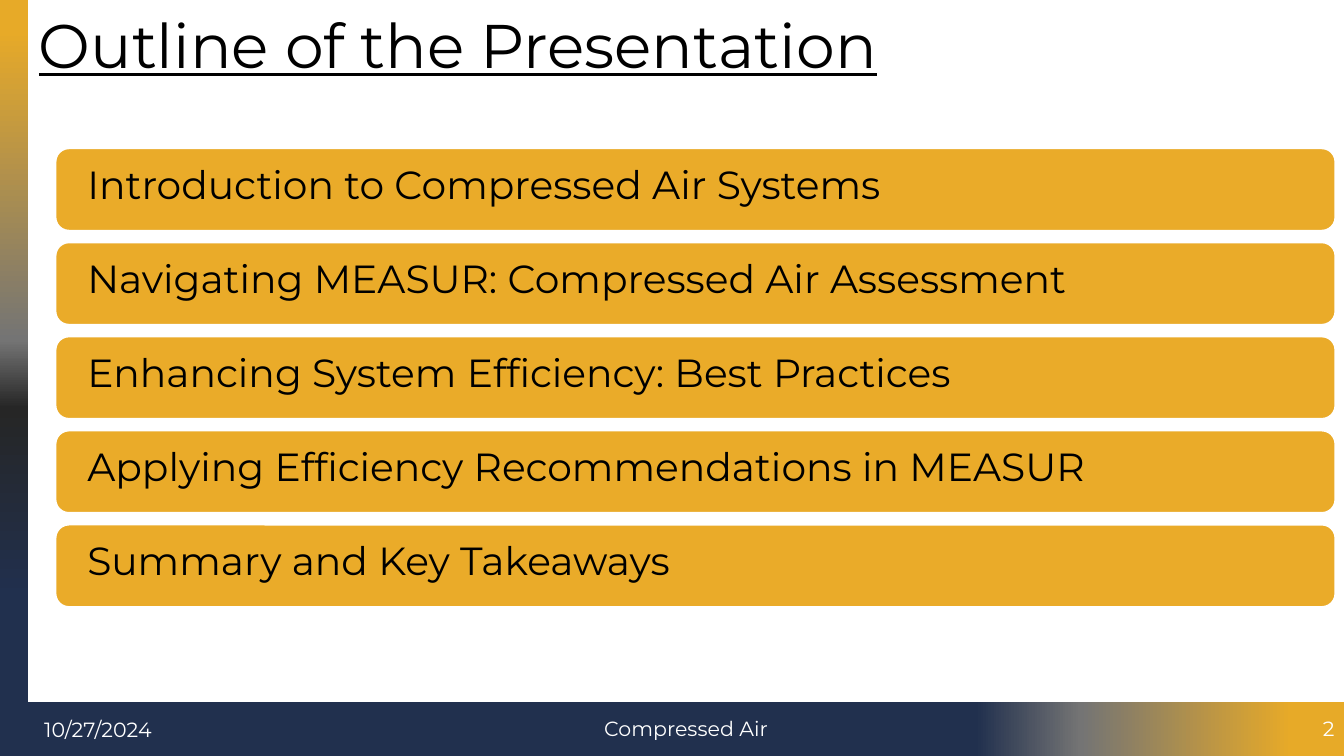
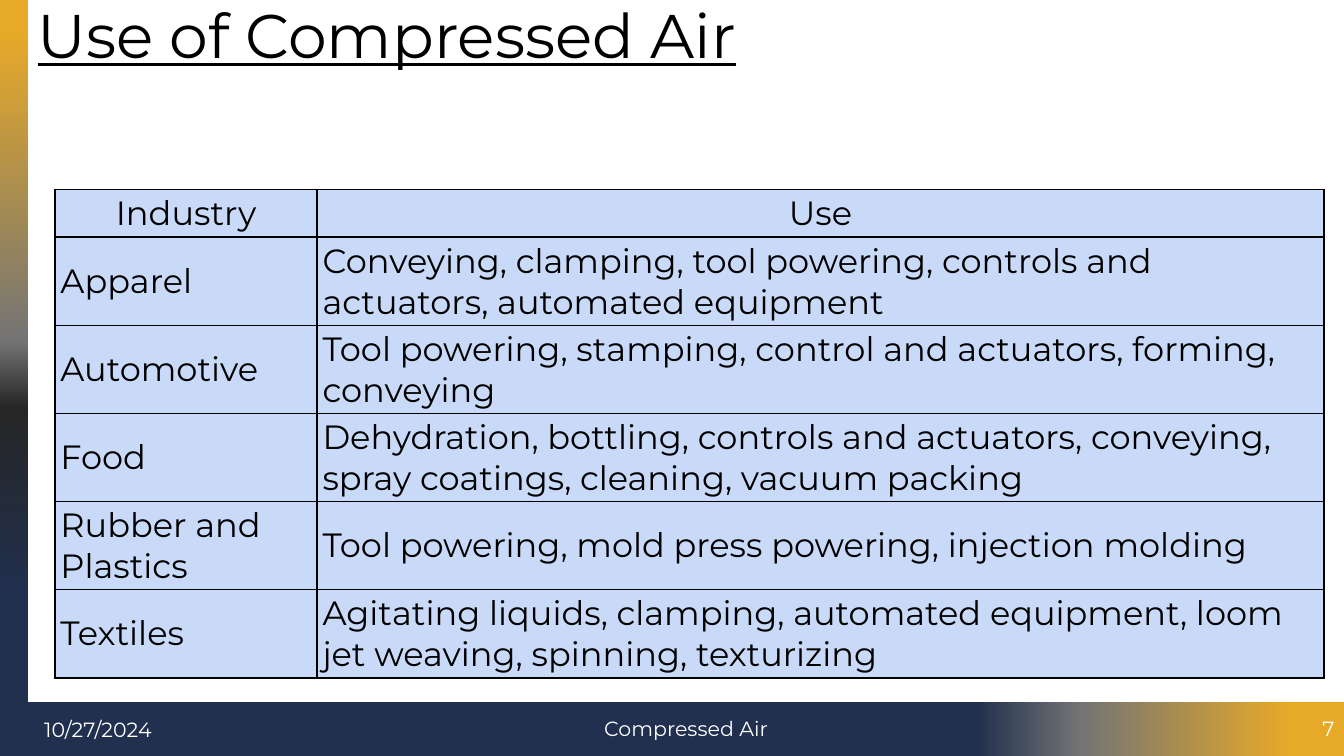
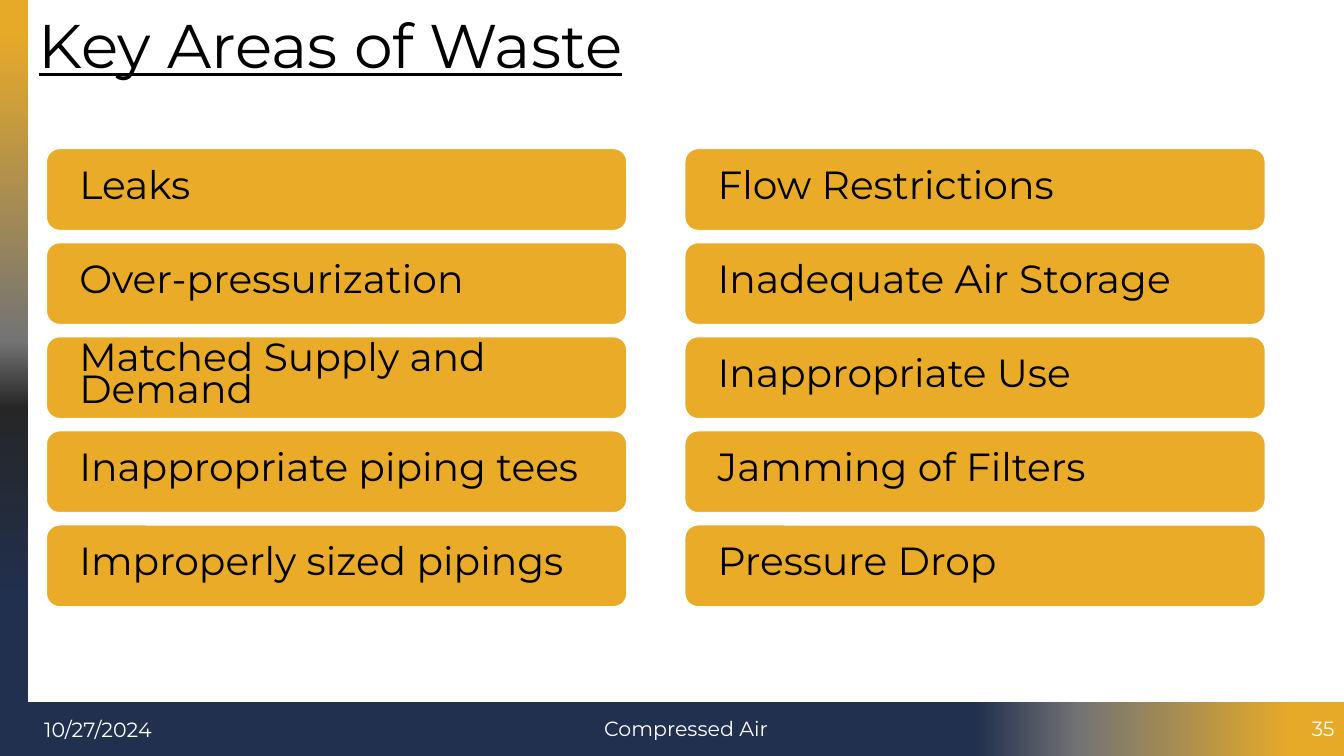
import pptx
import pptx.util
import pptx.dml.color
import pptx.enum.shapes
import pptx.enum.text
import pptx.oxml.ns
from dataclasses import dataclass
from lxml import etree

Inches = pptx.util.Inches
Pt = pptx.util.Pt
RGB = pptx.dml.color.RGBColor.from_string
qn = pptx.oxml.ns.qn
SHAPE = pptx.enum.shapes.MSO_SHAPE
ALIGN = pptx.enum.text.PP_ALIGN
ANCHOR = pptx.enum.text.MSO_ANCHOR


@dataclass(frozen=True)
class Theme:
    font: str = "Montserrat"
    black: str = "000000"
    white: str = "FFFFFF"
    gold: str = "EAAB29"
    cell: str = "C9DAF8"
    band_gold: str = "E7AA28"
    gray: str = "747474"
    charcoal: str = "262626"
    navy: str = "21304E"
    title_size: int = 33
    bar_size: int = 21
    table_size: int = 18
    footer_size: int = 11


T = Theme()
WIDTH = 10
HEIGHT = WIDTH * 9 / 16
SIDE_W = 0.21
FOOTER_TOP = 5.22
BAR_TOP, BAR_H, BAR_PITCH = 1.1, 0.62, 0.7
BOX_INSETS = (0.07, 0.04, 0.07, 0.04)

SIDE_STOPS = [(0, T.band_gold), (4, T.band_gold), (45, T.gray),
              (54, T.charcoal), (79, T.navy), (100, T.navy)]
FOOTER_STOPS = [(0, T.band_gold), (4, T.band_gold), (20, T.gray),
                (28, T.navy), (79, T.navy), (100, T.navy)]

DATE = "10/27/2024"
FOOTER = "Compressed Air"

OUTLINE = [
    "Introduction to Compressed Air Systems",
    "Navigating MEASUR: Compressed Air Assessment",
    "Enhancing System Efficiency: Best Practices",
    "Applying Efficiency Recommendations in MEASUR",
    "Summary and Key Takeaways",
]
USES = [
    ("Industry", "Use"),
    ("Apparel", "Conveying, clamping, tool powering, controls and actuators, "
                "automated equipment"),
    ("Automotive", "Tool powering, stamping, control and actuators, forming, "
                   "conveying"),
    ("Food", "Dehydration, bottling, controls and actuators, conveying, "
             "spray coatings, cleaning, vacuum packing"),
    ("Rubber and Plastics", "Tool powering, mold press powering, "
                            "injection molding"),
    ("Textiles", "Agitating liquids, clamping, automated equipment, "
                 "loom jet weaving, spinning, texturizing"),
]
WASTE_LEFT = [
    "Leaks",
    "Over-pressurization",
    "Matched Supply and Demand",
    "Inappropriate piping tees",
    "Improperly sized pipings",
]
WASTE_RIGHT = [
    "Flow Restrictions",
    "Inadequate Air Storage",
    "Inappropriate Use",
    "Jamming of Filters",
    "Pressure Drop",
]


def set_text(tf, text, size, color=T.black, align=ALIGN.LEFT, spacing=None,
             underline=None):
    tf.word_wrap = True
    p = tf.paragraphs[0]
    p.alignment = align
    p.line_spacing = spacing
    r = p.add_run()
    r.text = text
    r.font.name = T.font
    r.font.size = Pt(size)
    r.font.color.rgb = RGB(color)
    r.font.underline = underline


def set_insets(frame, insets):
    """Set left, top, right and bottom margins of a text frame or cell."""
    (frame.margin_left, frame.margin_top,
     frame.margin_right, frame.margin_bottom) = map(Inches, insets)


def add_text(slide, box, text, size, anchor=ANCHOR.MIDDLE, insets=BOX_INSETS,
             **style):
    tf = slide.shapes.add_textbox(*map(Inches, box)).text_frame
    set_insets(tf, insets)
    tf.vertical_anchor = anchor
    set_text(tf, text, size, **style)


def add_band(slide, box, stops, angle):
    """Draw a gradient band; angle is counter-clockwise in degrees."""
    sp = slide.shapes.add_shape(SHAPE.RECTANGLE, *map(Inches, box))
    sp.shadow.inherit = False
    sp.line.fill.background()
    sp.fill.gradient()
    sp.fill.gradient_angle = angle
    gs_list = next(sp.element.iter(qn("a:gsLst")))
    for gs in list(gs_list):
        gs_list.remove(gs)
    for pos, color in stops:
        gs = etree.SubElement(gs_list, qn("a:gs"), pos=str(pos * 1000))
        etree.SubElement(gs, qn("a:srgbClr"), val=color)


def add_slide(prs, number, title, title_box=(0.22, 0, 7.56, 0.65),
              title_anchor=ANCHOR.BOTTOM):
    """Add a blank slide with bands, footer texts and title."""
    slide = prs.slides.add_slide(prs.slide_layouts[6])
    add_band(slide, (0, 0, SIDE_W, HEIGHT), SIDE_STOPS, 270)
    add_band(slide, (SIDE_W, FOOTER_TOP, WIDTH - SIDE_W, HEIGHT - FOOTER_TOP),
             FOOTER_STOPS, 180)
    add_text(slide, (0.23, 5.24, 3.28, 0.39), DATE, T.footer_size,
             ANCHOR.TOP, (0.1,) * 4, color=T.white)
    add_text(slide, (3.3, 5.27, 3.61, 0.3), FOOTER, T.footer_size,
             color=T.white, align=ALIGN.CENTER)
    add_text(slide, (9.23, 5.27, 0.77, 0.3), str(number), T.footer_size,
             color=T.white, align=ALIGN.RIGHT)
    add_text(slide, title_box, title, T.title_size, title_anchor,
             spacing=0.9, underline=True)
    return slide


def add_bars(slide, items, left, width, indent):
    """Stack one rounded bar per item in a group."""
    group = slide.shapes.add_group_shape()
    for i, item in enumerate(items):
        box = (left, BAR_TOP + i * BAR_PITCH, width, BAR_H)
        sp = group.shapes.add_shape(SHAPE.ROUNDED_RECTANGLE,
                                    *map(Inches, box))
        sp.shadow.inherit = False
        sp.fill.solid()
        sp.fill.fore_color.rgb = RGB(T.gold)
        sp.line.color.rgb = RGB(T.white)
        sp.line.width = Pt(1.5)
        tf = sp.text_frame
        set_insets(tf, (indent, 0.09, 0.19, 0.09))
        tf.vertical_anchor = ANCHOR.MIDDLE
        set_text(tf, item, T.bar_size, spacing=0.7)


def add_borders(cell):
    tc_pr = cell._tc.get_or_add_tcPr()
    for side in ("lnL", "lnR", "lnT", "lnB"):
        ln = etree.SubElement(tc_pr, qn("a:" + side), w=str(Pt(1)))
        fill = etree.SubElement(ln, qn("a:solidFill"))
        etree.SubElement(fill, qn("a:srgbClr"), val=T.black)


def add_use_table(slide):
    col_widths = (1.95, 7.49)
    row_heights = [0.23] + [0.43] * (len(USES) - 1)
    box = (0.41, 1.41, sum(col_widths), sum(row_heights))
    table = slide.shapes.add_table(len(USES), len(col_widths),
                                   *map(Inches, box)).table
    table.horz_banding = False
    for col, width in zip(table.columns, col_widths):
        col.width = Inches(width)
    for i, (row, texts) in enumerate(zip(table.rows, USES)):
        row.height = Inches(row_heights[i])
        for cell, text in zip(row.cells, texts):
            add_borders(cell)
            cell.fill.solid()
            cell.fill.fore_color.rgb = RGB(T.cell)
            cell.margin_left = cell.margin_right = Inches(0.04)
            cell.margin_top = cell.margin_bottom = Pt(2)
            cell.vertical_anchor = ANCHOR.MIDDLE if i else ANCHOR.BOTTOM
            set_text(cell.text_frame, text, T.table_size,
                     align=ALIGN.LEFT if i else ALIGN.CENTER)


def main():
    prs = pptx.Presentation()
    prs.slide_width = Inches(WIDTH)
    prs.slide_height = Inches(HEIGHT)

    slide = add_slide(prs, 2, "Outline of the Presentation")
    add_bars(slide, OUTLINE, 0.41, 9.53, 0.21)

    slide = add_slide(prs, 7, "Use of Compressed Air",
                      (0.21, 0, 7.78, 0.52), ANCHOR.TOP)
    add_use_table(slide)

    slide = add_slide(prs, 35, "Key Areas of Waste")
    for items, left in ((WASTE_LEFT, 0.34), (WASTE_RIGHT, 5.09)):
        add_bars(slide, items, left, 4.33, 0.22)

    prs.save("out.pptx")


if __name__ == "__main__":
    main()
